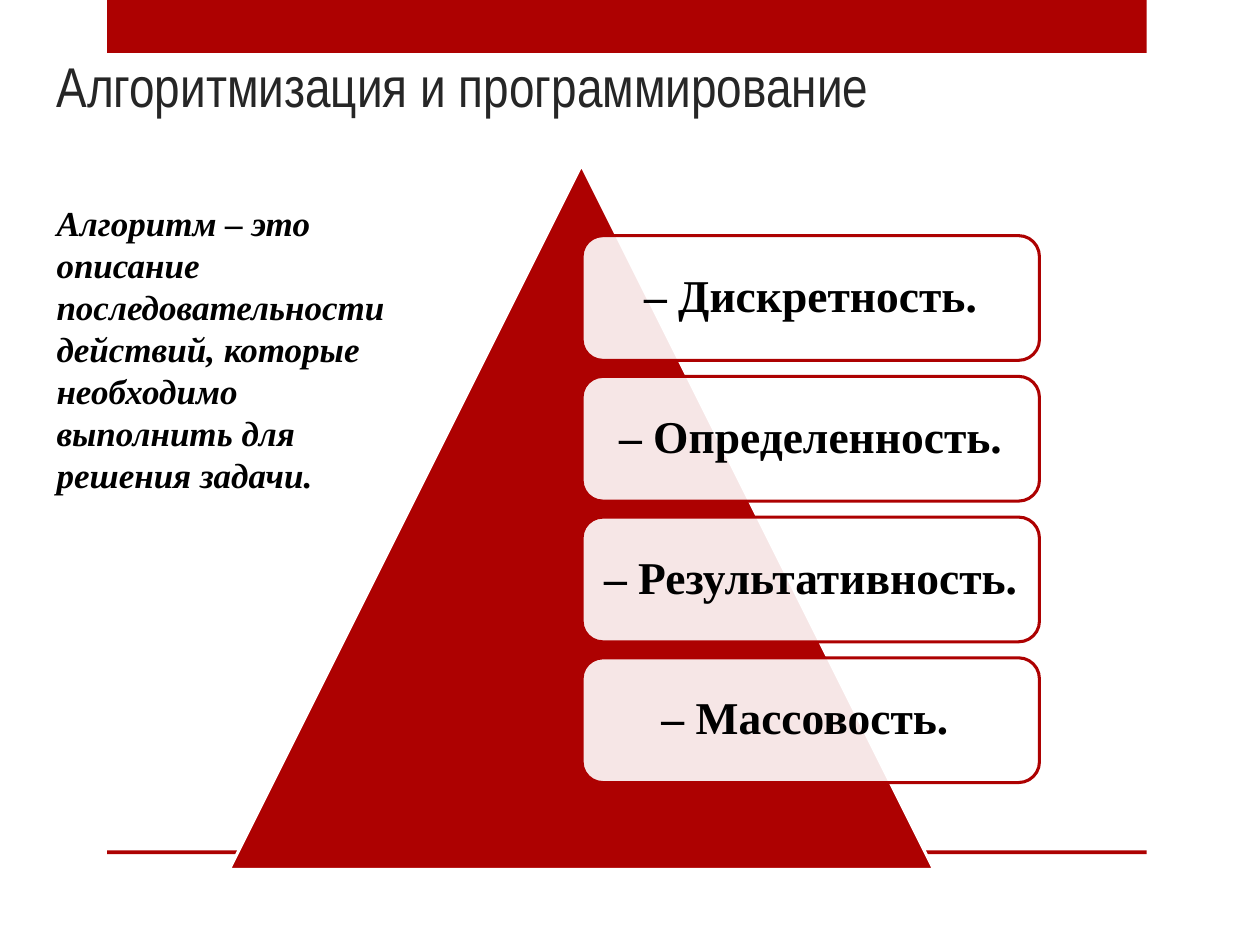
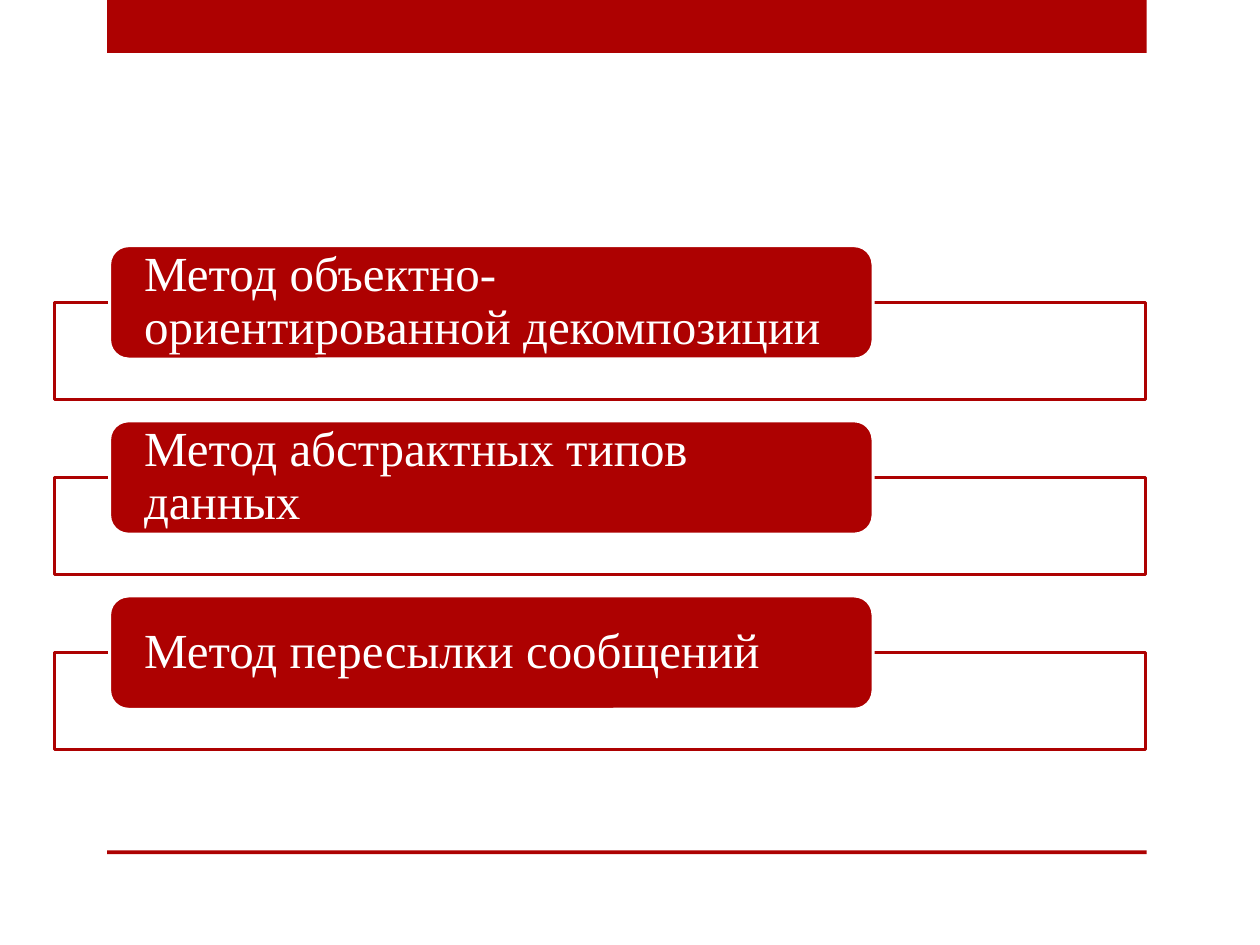
from lxml import etree
from pptx import Presentation
from pptx.dml.color import RGBColor
from pptx.enum.shapes import MSO_SHAPE
from pptx.enum.text import MSO_ANCHOR, PP_ALIGN
from pptx.oxml.ns import qn
from pptx.util import Inches, Pt

RECTANGLE = MSO_SHAPE.RECTANGLE
ROUNDED = MSO_SHAPE.ROUNDED_RECTANGLE
TRIANGLE = MSO_SHAPE.ISOSCELES_TRIANGLE
LEFT, CENTER = PP_ALIGN.LEFT, PP_ALIGN.CENTER
TOP, MIDDLE, BOTTOM = MSO_ANCHOR.TOP, MSO_ANCHOR.MIDDLE, MSO_ANCHOR.BOTTOM

RED = RGBColor(0xAD, 0x01, 0x01)
WHITE = RGBColor(0xFF, 0xFF, 0xFF)
BLACK = RGBColor(0x00, 0x00, 0x00)
TITLE_GRAY = RGBColor(0x26, 0x26, 0x26)
TITLE_FONT = "Arial Narrow"
BODY_FONT = "Times New Roman"


def add_box(slide, kind, left, top, width, height, fill, line=None, opacity=100):
    shape = slide.shapes.add_shape(
        kind, Inches(left), Inches(top), Inches(width), Inches(height))
    shape.shadow.inherit = False
    shape.fill.solid()
    shape.fill.fore_color.rgb = fill
    if opacity < 100:
        color = shape.fill._xPr.find(qn("a:solidFill"))[0]
        etree.SubElement(color, qn("a:alpha"), val=str(opacity * 1000))
    if line is None:
        shape.line.fill.background()
    else:
        shape.line.color.rgb = line
        shape.line.width = Pt(1.75)
    return shape


def write_text(shape, text, size, color, font=BODY_FONT, align=LEFT, anchor=MIDDLE,
               insets=(0.1, 0.05), spacing=None, bold=False, italic=False):
    """Write one paragraph; insets are (horizontal, vertical) in inches."""
    frame = shape.text_frame
    frame.word_wrap = True
    frame.vertical_anchor = anchor
    frame.margin_left = frame.margin_right = Inches(insets[0])
    frame.margin_top = frame.margin_bottom = Inches(insets[1])
    paragraph = frame.paragraphs[0]
    paragraph.alignment = align
    paragraph.line_spacing = spacing
    run = paragraph.add_run()
    run.text = text
    run.font.name = font
    run.font.size = Pt(size)
    run.font.color.rgb = color
    run.font.bold = bold
    run.font.italic = italic


presentation = Presentation()
presentation.slide_width = Inches(10)
presentation.slide_height = Inches(7.5)
blank_layout = presentation.slide_layouts[6]

# Both slides carry the top band and the footer rule
slides = []
for _ in range(2):
    slide = presentation.slides.add_slide(blank_layout)
    add_box(slide, RECTANGLE, 0.85, 0, 8.25, 0.42, RED)
    add_box(slide, RECTANGLE, 0.85, 6.75, 8.25, 0.03, RED)
    slides.append(slide)
properties_slide, methods_slide = slides

# Slide 1: properties of an algorithm over a pyramid
add_box(properties_slide, TRIANGLE, 1.82, 1.31, 5.59, 5.59, RED, WHITE)
properties = ["– Дискретность.", "– Определенность.",
              "– Результативность.", "– Массовость. "]
for index, name in enumerate(properties):
    card = add_box(properties_slide, ROUNDED, 4.62, 1.87 + index * 1.117, 3.63, 0.99,
                   WHITE, RED, opacity=90)
    write_text(card, name, 26, BLACK, align=CENTER, insets=(0.11, 0.11),
               spacing=0.9, bold=True)

title = properties_slide.shapes.add_textbox(
    Inches(0.35), Inches(0.36), Inches(9.37), Inches(0.63))
write_text(title, "Алгоритмизация и программирование", 32, TITLE_GRAY,
           font=TITLE_FONT, anchor=BOTTOM)
definition = properties_slide.shapes.add_textbox(
    Inches(0.35), Inches(1.55), Inches(2.91), Inches(2.46))
write_text(definition,
           "Алгоритм – это описание последовательности действий, "
           "которые необходимо выполнить для решения задачи.",
           20, BLACK, anchor=TOP, bold=True, italic=True)

# Slide 2: methods, each a label over an open frame
methods = ["Метод объектно-ориентированной декомпозиции",
           "Метод абстрактных типов данных",
           "Метод пересылки сообщений"]
for index, name in enumerate(methods):
    label_top = 1.95 + index * 1.39
    add_box(methods_slide, RECTANGLE, 0.43, label_top + 0.45, 8.66, 0.77,
            WHITE, RED, opacity=90)
    label = add_box(methods_slide, ROUNDED, 0.87, label_top, 6.06, 0.9, RED, WHITE)
    write_text(label, name, 28, WHITE, insets=(0.23, 0), spacing=0.9)

presentation.save("out.pptx")
